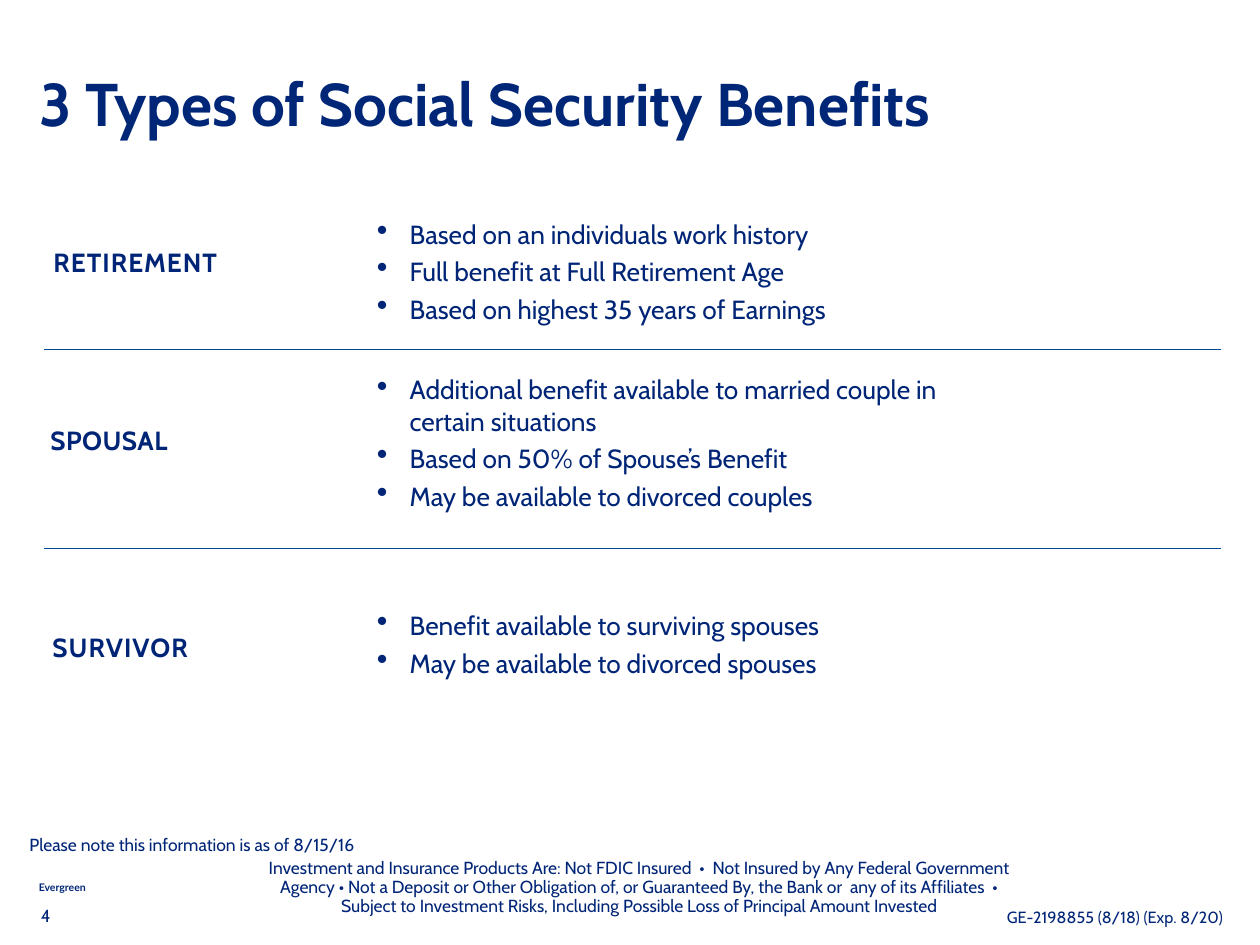
from lxml.etree import SubElement
from pptx import Presentation
from pptx.dml.color import RGBColor
from pptx.enum.shapes import MSO_CONNECTOR, MSO_SHAPE
from pptx.enum.text import MSO_ANCHOR, PP_ALIGN
from pptx.oxml.ns import qn
from pptx.util import Pt

COLORS = {"title": "002677", "text": "002577", "rule": "004893", "back": "FFFFFF"}
ROWS = [
    ("RETIREMENT", 36.7, 169.2, 0.7, 145.4, 81.4, [
        "Based on an individuals work history",
        "Full benefit at Full Retirement Age",
        "Based on highest 35 years of Earnings"]),
    ("SPOUSAL", 34.6, 290.9, 0.3, 252, 103, [
        "Additional benefit available to married couple in certain situations",
        "Based on 50% of Spouse’s Benefit",
        "May be available to divorced couples"]),
    ("SURVIVOR", 36, 432.7, 0.7, 414, 55.4, [
        "Benefit available to surviving spouses",
        "May be available to divorced spouses"]),
]
RULES = [239.8, 375.8]
NOTICE = [
    "Investment and Insurance Products Are: Not FDIC Insured  •  Not Insured by Any "
    "Federal Government Agency • Not a Deposit or Other Obligation of, or Guaranteed "
    "By, the Bank or  any of its Affiliates  •",
    "Subject to Investment Risks, Including Possible Loss of Principal Amount Invested",
]


class Deck:
    """Draw styled elements on the current slide, measured in points."""

    def __init__(self, wide, high):
        self.prs = Presentation()
        self.prs.slide_width, self.prs.slide_height = Pt(wide), Pt(high)
        self.slide = self.prs.slides.add_slide(self.prs.slide_layouts[6])
        self.font = "Cabin"

    def color(self, name):
        return RGBColor.from_string(COLORS[name])

    def run(self, para, text, size, bold=False, color="text", font=None, gap=0):
        run = para.add_run()
        run.text = text
        run.font.name = font or self.font
        run.font.size = Pt(size)
        run.font.bold = bold
        run.font.color.rgb = self.color(color)
        if gap:
            run._r.get_or_add_rPr().set("spc", str(round(gap * 100)))

    def frame(self, shape, pad, anchor):
        frame = shape.text_frame
        frame.word_wrap = True
        frame.margin_left = frame.margin_right = Pt(pad[0])
        frame.margin_top = frame.margin_bottom = Pt(pad[1])
        frame.vertical_anchor = anchor
        return frame

    def paras(self, frame, lines):
        for num, line in enumerate(lines):
            yield (frame.add_paragraph() if num else frame.paragraphs[0]), line

    def text(self, box, lines, size, pad=(7.2, 3.6), anchor=MSO_ANCHOR.TOP,
             align=PP_ALIGN.LEFT, lead=0.9, **style):
        shape = self.slide.shapes.add_textbox(*map(Pt, box))
        frame = self.frame(shape, pad, anchor)
        for para, line in self.paras(frame, lines):
            para.alignment = align
            para.line_spacing = lead
            self.run(para, line, size, **style)

    def bullets(self, box, lines, size=18, space=4):
        shape = self.slide.shapes.add_shape(MSO_SHAPE.RECTANGLE, *map(Pt, box))
        shape.shadow.inherit = False
        shape.fill.solid()
        shape.fill.fore_color.rgb = self.color("back")
        shape.line.fill.background()
        frame = self.frame(shape, (7.2, 3.6), MSO_ANCHOR.MIDDLE)
        for para, line in self.paras(frame, lines):
            self.mark(para)
            para.alignment = PP_ALIGN.LEFT
            if para._p is not frame.paragraphs[0]._p:
                para.space_before = Pt(space)
            self.run(para, line, size)

    def mark(self, para, indent=22.5):
        props = para._p.get_or_add_pPr()
        props.set("marL", str(Pt(indent)))
        props.set("indent", str(-Pt(indent)))
        tint = SubElement(props, qn("a:buClr"))
        SubElement(tint, qn("a:srgbClr"), val=COLORS["text"])
        SubElement(props, qn("a:buSzPct"), val="120000")
        SubElement(props, qn("a:buChar"), char="•")

    def rule(self, left, right, top):
        ends = map(Pt, (left, top, right, top))
        line = self.slide.shapes.add_connector(MSO_CONNECTOR.STRAIGHT, *ends)
        line.line.color.rgb = self.color("rule")
        line.line.width = Pt(0.5)
        SubElement(line._element.spPr, qn("a:effectLst"))


def main():
    deck = Deck(864, 648)
    mid = MSO_ANCHOR.MIDDLE
    deck.text((20.2, 45.4, 817, 55.4), ["3 Types of Social Security Benefits"], 41.3,
              anchor=mid, bold=True, color="title")
    for name, left, top, gap, high, tall, lines in ROWS:
        deck.text((left, top, 175, 21.6), [name], 18, pad=(0, 0), lead=1,
                  bold=True, gap=gap)
        deck.bullets((251.3, high, 422, tall), lines)
    for top in RULES:
        deck.rule(30.2, 837.4, top)
    deck.text((20.2, 571.7, 648.7, 14.4), ["Please note this information is as of 8/15/16"],
              12, pad=(0, 0), anchor=MSO_ANCHOR.BOTTOM, lead=1)
    deck.text((172.8, 586, 531.4, 56.9), NOTICE, 12, align=PP_ALIGN.CENTER)
    deck.text((21.6, 599.8, 134, 17.3), ["Evergreen"], 7.2, pad=(5, 2.9), anchor=mid,
              lead=1, bold=True, color="title", font="Lato")
    deck.text((20.9, 618.5, 171.4, 21.6), ["4"], 12)
    deck.text((683.3, 620, 171.4, 21.6), ["GE-2198855 (8/18) (Exp. 8/20)"], 11.1)
    deck.prs.save("out.pptx")


if __name__ == "__main__":
    main()
